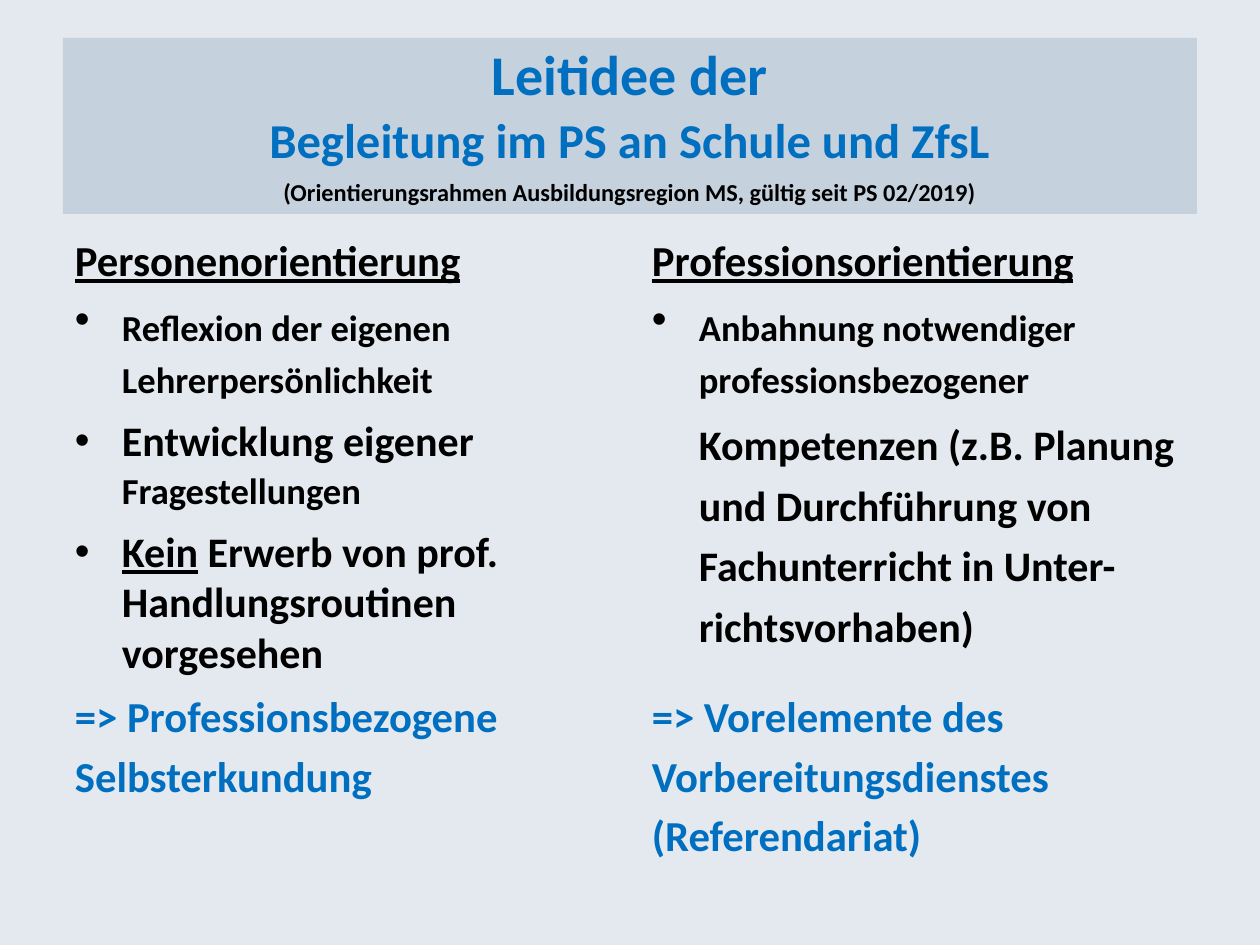
from lxml.etree import SubElement
from pptx import Presentation
from pptx.dml.color import RGBColor
from pptx.enum.shapes import MSO_SHAPE
from pptx.enum.text import MSO_ANCHOR, PP_ALIGN
from pptx.oxml.ns import qn
from pptx.util import Pt

PX = 914400 / 126
COLORS = {"page": "E3E9EE", "banner": "C6D1DE", "accent": "006FC0", "text": "000000"}
BULLET_INDENT = 47
BULLET_SIZE = 24

# Each line: text, size, raise in %, line spacing (float = lines, Pt = exact), space before
TITLE = [
    ("Leitidee der", 32, 0, 1.02, 2, "accent"),
    ("Begleitung im PS an Schule und ZfsL", 48, 2, Pt(38.4), 1.9, "accent"),
    ("(Orientierungsrahmen Ausbildungsregion MS, gültig seit PS 02/2019)",
     24, 2, Pt(19.1), 0, "text"),
]
# Bulleted lines end with True, their continuations with False
PERSON_POINTS = [
    ("Reflexion der eigenen", 36, 3, Pt(25.4), 1.3, True),
    ("Lehrerpersönlichkeit", 36, 1, Pt(28.8), 0.2, False),
    ("Entwicklung eigener", 24, 0, 1.02, 3.8, True),
    ("Fragestellungen", 36, 1, Pt(28.8), 1.4, False),
    ("Kein| Erwerb von prof. Handlungsroutinen vorgesehen", 24, 0, 1.0, 4.2, True),
]
PROFESSION_POINTS = [
    ("Anbahnung notwendiger", 36, 3, Pt(25.4), 1.3, True),
    ("professionsbezogener", 36, 1, Pt(28.8), 0.2, False),
    ("Kompetenzen (z.B. Planung und Durchführung von Fachunterricht in Unter- "
     "richtsvorhaben)", 24, 0, Pt(34.6), 0.7, False),
]
COLUMNS = [
    (75, "Personenorientierung", PERSON_POINTS,
     ["=> Professionsbezogene", "Selbsterkundung"]),
    (652, "Professionsorientierung", PROFESSION_POINTS,
     ["=> Vorelemente des", "Vorbereitungsdienstes", "(Referendariat)"]),
]


def emu(*lengths):
    return [round(length * PX) for length in lengths]


def color(name):
    return RGBColor.from_string(COLORS[name])


def clear_insets(frame):
    frame.word_wrap = True
    frame.vertical_anchor = MSO_ANCHOR.TOP
    frame.margin_left = frame.margin_right = frame.margin_top = frame.margin_bottom = 0


def add_frame(slide, *box):
    frame = slide.shapes.add_textbox(*emu(*box)).text_frame
    clear_insets(frame)
    return frame


def add_line(frame, index, text, size, lift, spacing, before, tint="text", underline=False):
    """Write one paragraph; a part before "|" is underlined."""
    line = frame.paragraphs[0] if index == 0 else frame.add_paragraph()
    line.line_spacing = spacing
    line.space_before = Pt(before)
    parts = text.split("|")
    for position, part in enumerate(parts):
        run = line.add_run()
        run.text = part
        run.font.name = "Calibri"
        run.font.size = Pt(size)
        run.font.bold = True
        run.font.underline = underline or position < len(parts) - 1
        run.font.color.rgb = color(tint)
        if lift:
            run._r.get_or_add_rPr().set("baseline", str(lift * 1000))
    return line


def indent(line, size, bulleted):
    properties = line._p.get_or_add_pPr()
    hang = emu(BULLET_INDENT)[0]
    properties.set("marL", str(hang))
    properties.set("indent", str(-hang if bulleted else 0))
    if bulleted:
        percent = round(100 * BULLET_SIZE / size)
        SubElement(properties, qn("a:buSzPct"), val=str(percent * 1000))
        SubElement(properties, qn("a:buFont"), typeface="Arial")
        SubElement(properties, qn("a:buChar"), char="•")


def add_banner(slide, *box):
    banner = slide.shapes.add_shape(MSO_SHAPE.RECTANGLE, *emu(*box))
    banner.shadow.inherit = False
    banner.fill.solid()
    banner.fill.fore_color.rgb = color("banner")
    banner.line.fill.background()
    clear_insets(banner.text_frame)
    for index, row in enumerate(TITLE):
        add_line(banner.text_frame, index, *row).alignment = PP_ALIGN.CENTER


def add_column(slide, left, top, width, heading, points, conclusion):
    heading_frame = add_frame(slide, left, top, width, 53)
    add_line(heading_frame, 0, heading, 42, 3, Pt(29.5), 1.5, underline=True)

    points_frame = add_frame(slide, left, top + 70, width, 368)
    for index, (*row, bulleted) in enumerate(points):
        line = add_line(points_frame, index, *row)
        indent(line, row[1], bulleted)

    conclusion_frame = add_frame(slide, left, top + 456, width, 57 * len(conclusion))
    for index, text in enumerate(conclusion):
        lift, spacing, before = (2, 33.6, 0.2) if index else (3, 29.5, 1.5)
        add_line(conclusion_frame, index, text, 42, lift, Pt(spacing), before, "accent")


def main():
    presentation = Presentation()
    presentation.slide_width, presentation.slide_height = emu(1260, 945)
    slide = presentation.slides.add_slide(presentation.slide_layouts[6])
    slide.background.fill.solid()
    slide.background.fill.fore_color.rgb = color("page")
    add_banner(slide, 63, 38, 1134, 176)
    for left, heading, points, conclusion in COLUMNS:
        add_column(slide, left, 242, 540, heading, points, conclusion)
    presentation.save("out.pptx")


if __name__ == "__main__":
    main()
